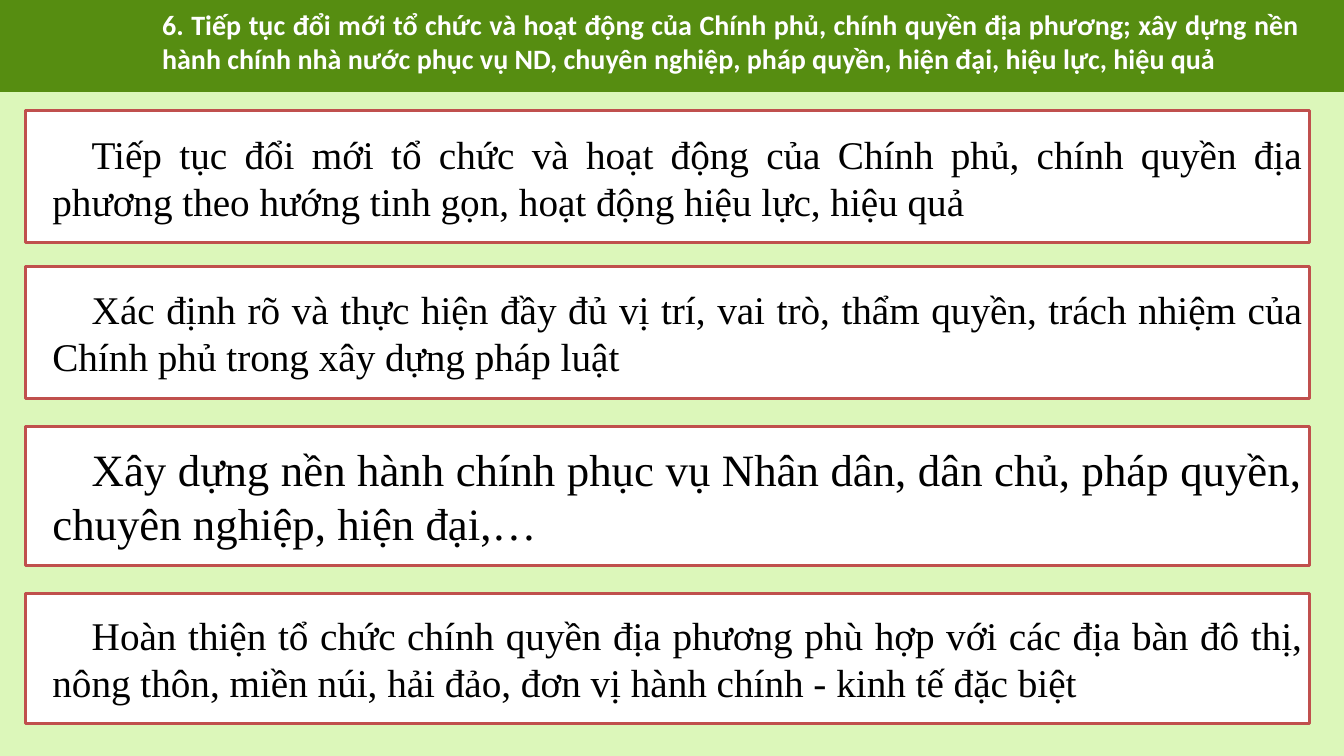
from typing import NamedTuple

from pptx import Presentation
from pptx.dml.color import RGBColor
from pptx.enum.shapes import MSO_SHAPE as Preset
from pptx.enum.text import MSO_ANCHOR as Anchor, PP_ALIGN as Align
from pptx.util import Inches, Pt

GREEN, PALE, WHITE, RED, BLACK = "568D11", "DCF7BA", "FFFFFF", "C0504D", "000000"
PANEL_LEFT, PANEL_WIDTH = 0.25, 12.74


class Panel(NamedTuple):
    top: float
    height: float
    text: str
    size: int = 28


TITLE = (
    "6. Tiếp tục đổi mới tổ chức và hoạt động của Chính phủ, chính quyền địa phương; "
    "xây dựng nền hành chính nhà nước phục vụ ND, chuyên nghiệp, pháp quyền, "
    "hiện đại, hiệu lực, hiệu quả"
)
PANELS = [
    Panel(1.1, 1.31, "Tiếp tục đổi mới tổ chức và hoạt động của Chính phủ, chính quyền "
          "địa phương theo hướng tinh gọn, hoạt động hiệu lực, hiệu quả"),
    Panel(2.64, 1.31, "Xác định rõ và thực hiện đầy đủ vị trí, vai trò, thẩm quyền, "
          "trách nhiệm của Chính phủ trong xây dựng pháp luật"),
    Panel(4.23, 1.38, "Xây dựng nền hành chính phục vụ Nhân dân, dân chủ, pháp quyền, "
          "chuyên nghiệp, hiện đại,…", size=32),
    Panel(5.89, 1.29, "Hoàn thiện tổ chức chính quyền địa phương phù hợp với các địa bàn "
          "đô thị, nông thôn, miền núi, hải đảo, đơn vị hành chính - kinh tế đặc biệt"),
]


def color(value: str) -> RGBColor:
    return RGBColor.from_string(value)


def add_box(page, left: float, top: float, width: float, height: float,
            fill: str, line: str, line_width: float):
    box = page.shapes.add_shape(Preset.RECTANGLE, Inches(left), Inches(top),
                                Inches(width), Inches(height))
    box.shadow.inherit = False
    box.fill.solid()
    box.fill.fore_color.rgb = color(fill)
    box.line.color.rgb = color(line)
    box.line.width = Pt(line_width)
    return box


def write(box, text: str, *, font: str, size: int, ink: str, bold: bool = False,
          margin: float = 0, indent: float = 0, anchor=Anchor.TOP,
          inset: tuple[float, float] = (0.1, 0.05)) -> None:
    """Fill the box with one justified paragraph; inset is (sides, top and bottom)."""
    frame = box.text_frame
    frame.word_wrap = True
    frame.vertical_anchor = anchor
    frame.margin_left = frame.margin_right = Inches(inset[0])
    frame.margin_top = frame.margin_bottom = Inches(inset[1])
    para = frame.paragraphs[0]
    para.alignment = Align.JUSTIFY
    properties = para._p.get_or_add_pPr()
    properties.set("marL", str(Inches(margin)))
    properties.set("indent", str(Inches(indent)))
    span = para.add_run()
    span.text = text
    span.font.name = font
    span.font.size = Pt(size)
    span.font.bold = bold
    span.font.color.rgb = color(ink)


def main() -> None:
    deck = Presentation()
    deck.slide_width, deck.slide_height = Inches(13.33), Inches(7.5)
    page = deck.slides.add_slide(deck.slide_layouts[6])
    page.background.fill.solid()
    page.background.fill.fore_color.rgb = color(GREEN)
    add_box(page, 0, 0.92, 13.33, 6.58, PALE, PALE, 1.25)

    title = page.shapes.add_textbox(Inches(1.46), Inches(0.03), Inches(11.53), Inches(0.77))
    write(title, TITLE, font="Calibri", size=20, ink=WHITE, bold=True, margin=0.05)

    for panel in PANELS:
        box = add_box(page, PANEL_LEFT, panel.top, PANEL_WIDTH, panel.height, WHITE, RED, 2)
        write(box, panel.text, font="Times New Roman", size=panel.size, ink=BLACK,
              margin=0.2, indent=0.39, anchor=Anchor.MIDDLE, inset=(0.07, 0.04))

    deck.save("out.pptx")


if __name__ == "__main__":
    main()
